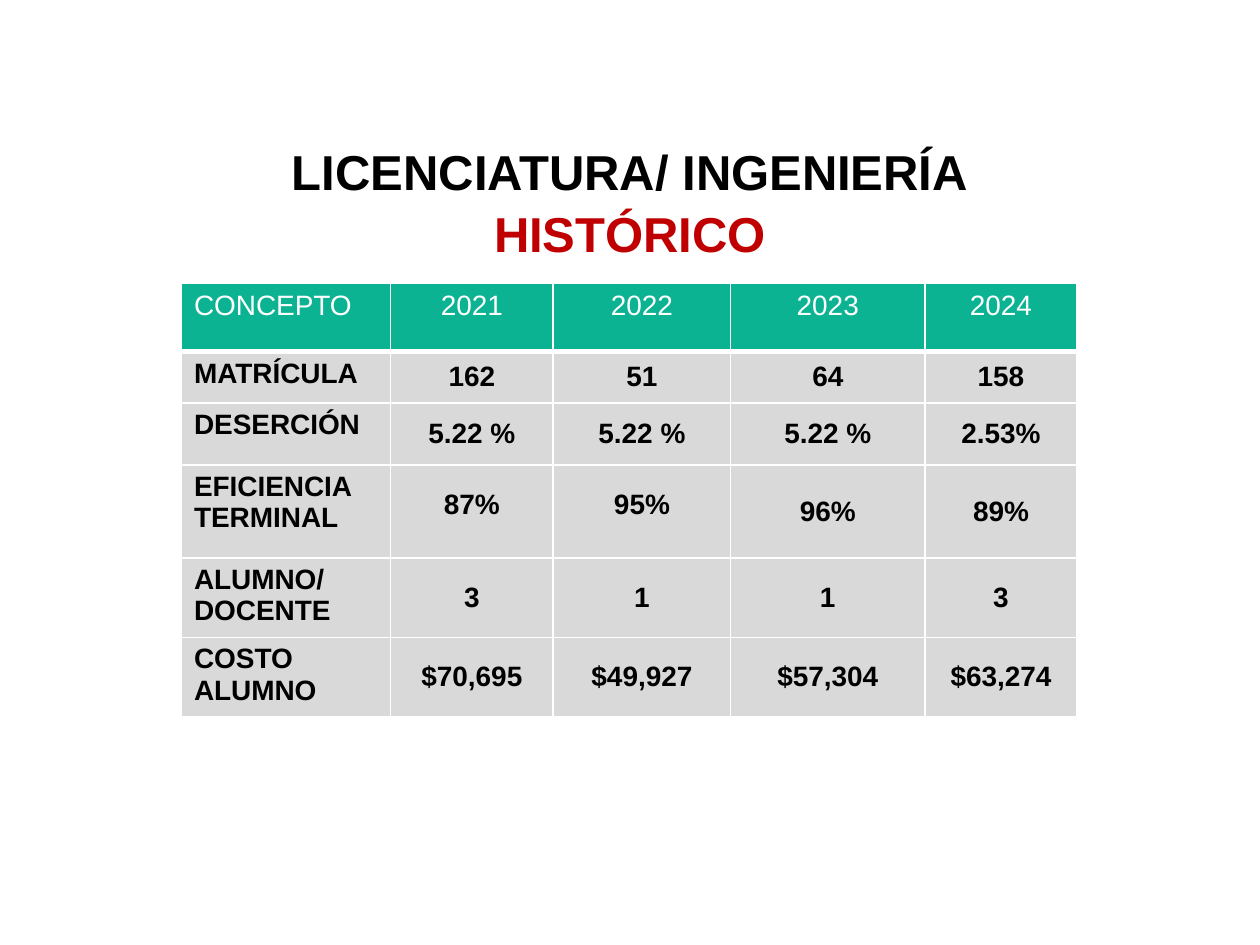
from lxml import etree
from pptx import Presentation
from pptx.dml.color import RGBColor
from pptx.enum import text as t
from pptx.oxml.ns import qn
from pptx.util import Inches, Pt

COLORS = {"white": "FFFFFF", "black": "000000", "red": "C00000",
          "green": "0CB393", "gray": "D9D9D9"}
COLUMN_WIDTHS = [1.66, 1.29, 1.41, 1.54, 1.21]
ROW_HEIGHTS = [0.54, 0.41, 0.49, 0.74, 0.63, 0.63]
ROWS = [
    ["CONCEPTO", "2021", "2022", "2023", "2024"],
    ["MATRÍCULA", "162", "51", "64", "158"],
    ["DESERCIÓN", "5.22 %", "5.22 %", "5.22 %", "2.53%"],
    ["EFICIENCIA TERMINAL", "87%", "95%", "96%", "89%"],
    ["ALUMNO/\nDOCENTE", "3", "1", "1", "3"],
    ["COSTO ALUMNO", "$70,695", "$49,927", "$57,304", "$63,274"],
]
RAISED_CELLS = {(3, 1), (3, 2)}


def write_text(frame, content, size, colors, bold=True,
               align=t.PP_ALIGN.CENTER, line_spacing=None):
    """Write one paragraph a line; colors holds one colour name a line."""
    frame.text = content
    for paragraph, color in zip(frame.paragraphs, colors):
        paragraph.alignment = align
        paragraph.line_spacing = line_spacing
        for run in paragraph.runs:
            run.font.name = "Arial"
            run.font.size = Pt(size)
            run.font.bold = bold
            run.font.color.rgb = RGBColor.from_string(COLORS[color])


def set_borders(cell, widths, color):
    """Put border lines, in points, before the fill of the cell."""
    properties = cell._tc.get_or_add_tcPr()
    for position, (side, width) in enumerate(widths.items()):
        line = etree.Element(qn(f"a:ln{side}"), w=str(Pt(width)))
        fill = etree.SubElement(line, qn("a:solidFill"))
        etree.SubElement(fill, qn("a:srgbClr"), val=COLORS[color])
        properties.insert(position, line)


def add_title(slide):
    title = slide.shapes.title
    title.left, title.top = Inches(2), Inches(1.05)
    title.width, title.height = Inches(6), Inches(1.04)
    frame = title.text_frame
    frame.word_wrap = True
    frame.auto_size = t.MSO_AUTO_SIZE.NONE
    frame.vertical_anchor = t.MSO_ANCHOR.TOP
    write_text(frame, "LICENCIATURA/ INGENIERÍA\nHISTÓRICO", 28,
               ["black", "red"], line_spacing=1.05)


def format_cell(cell, row, column, content):
    header = row == 0
    cell.fill.solid()
    cell.fill.fore_color.rgb = RGBColor.from_string(COLORS["green" if header else "gray"])
    write_text(cell.text_frame, content, 16,
               ["white" if header else "black"] * 2, bold=not header,
               align=t.PP_ALIGN.CENTER if column else t.PP_ALIGN.LEFT)
    if header:
        set_borders(cell, {"L": 1, "R": 1, "T": 1, "B": 3}, "white")
    elif (row, column) in RAISED_CELLS:
        cell.vertical_anchor = t.MSO_ANCHOR.BOTTOM
        cell.margin_bottom = Inches(0.3)
    elif column:
        cell.vertical_anchor = t.MSO_ANCHOR.MIDDLE


def add_history_table(slide):
    table = slide.shapes.add_table(
        len(ROWS), len(COLUMN_WIDTHS), Inches(1.44), Inches(2.25),
        Inches(sum(COLUMN_WIDTHS)), Inches(sum(ROW_HEIGHTS))).table
    for column, width in zip(table.columns, COLUMN_WIDTHS):
        column.width = Inches(width)
    for row, height in zip(table.rows, ROW_HEIGHTS):
        row.height = Inches(height)
    for row, values in enumerate(ROWS):
        for column, content in enumerate(values):
            format_cell(table.cell(row, column), row, column, content)


def main():
    presentation = Presentation()
    presentation.slide_width, presentation.slide_height = Inches(10), Inches(7.5)
    slide = presentation.slides.add_slide(presentation.slide_layouts[5])
    add_history_table(slide)
    add_title(slide)
    presentation.save("out.pptx")


if __name__ == "__main__":
    main()
